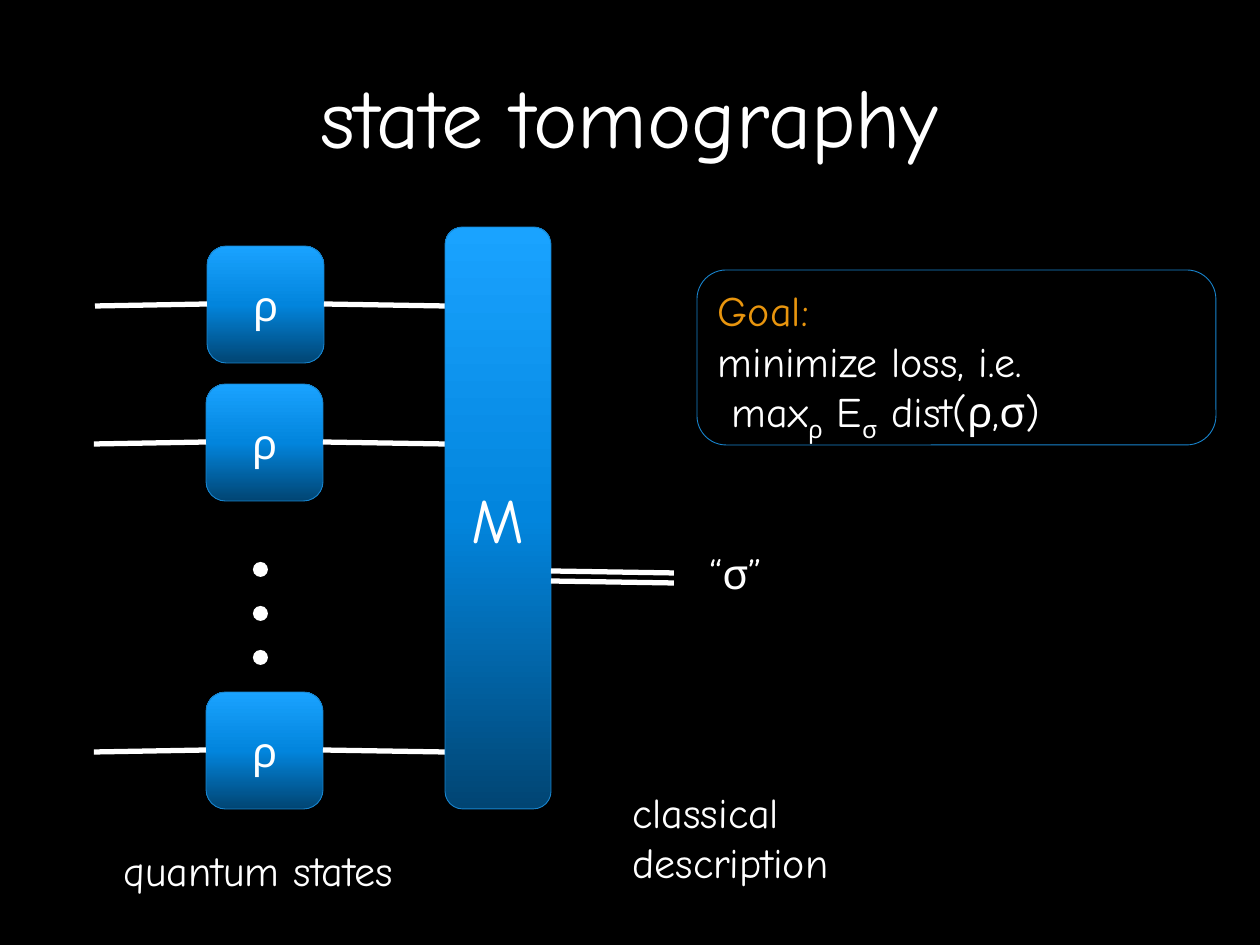
from dataclasses import dataclass

from lxml import etree
from pptx import Presentation
from pptx.dml.color import RGBColor
from pptx.enum.shapes import MSO_CONNECTOR, MSO_SHAPE
from pptx.enum.text import MSO_ANCHOR, PP_ALIGN
from pptx.oxml import parse_xml
from pptx.oxml.ns import nsdecls, qn
from pptx.util import Pt

ROUND, OVAL = MSO_SHAPE.ROUNDED_RECTANGLE, MSO_SHAPE.OVAL
LINE = MSO_CONNECTOR.STRAIGHT
LEFT, CENTER = PP_ALIGN.LEFT, PP_ALIGN.CENTER
TOP, MIDDLE = MSO_ANCHOR.TOP, MSO_ANCHOR.MIDDLE


@dataclass(frozen=True)
class Theme:
    font: str = "Comic Neue"
    back: str = "000000"
    ink: str = "FFFFFF"
    accent: str = "E8950E"
    edge: str = "1884CD"
    blend: tuple = ((0, "014573"), (50, "0285DD"), (100, "1AA3FF"))
    title: int = 48
    large: int = 36
    body: int = 24
    wire: float = 3
    hair: float = 0.5


THEME = Theme()
SCALE = 914400 / 126  # EMU per px

# Content: each run is (text, colour, baseline in percent)
TITLE = ("state tomography", (94, 16, 1071, 197))
LABELS = [
    ("“σ”", (697, 541, 106, 63)),
    ("quantum states", (111, 838, 314, 63)),
    ("classical\ndescription", (620, 780, 232, 115)),
]
GOAL = [
    [("Goal:", THEME.accent, 0)],
    [
        ("minimize loss, i.e.\n max", THEME.ink, 0),
        ("ρ", THEME.ink, -25),
        (" E", THEME.ink, 0),
        ("σ", THEME.ink, -25),
        (" dist(ρ,σ)", THEME.ink, 0),
    ],
]
GOAL_BOX = (697, 270, 519, 175)

# Layout
STATES = [(207, 246), (206, 384), (206, 692)]  # left, top
SIDE, REACH, DROP = 117, 112, 2
METER = (445, 227, 106, 582)
DOT, DOT_LEFT, DOT_TOP, DOT_STEP = 15, 253, 562, 44
OUT_ROWS, OUT_END = (571, 581), 674


def emu(*sizes):
    return [round(size * SCALE) for size in sizes]


def color(code):
    return RGBColor.from_string(code)


def write(frame, text, size=THEME.body, align=LEFT, anchor=TOP, wrap=True):
    """Fill a frame with a plain string or with paragraphs of runs."""
    frame.word_wrap, frame.vertical_anchor = wrap, anchor
    paras = [[(text, THEME.ink, 0)]] if isinstance(text, str) else text
    for i, runs in enumerate(paras):
        para = frame.add_paragraph() if i else frame.paragraphs[0]
        para.alignment = align
        para.font.size, para.font.name = Pt(size), THEME.font
        for words, code, base in runs:
            for j, part in enumerate(words.split("\n")):
                if j:
                    para.add_line_break()
                run = para.add_run()
                run.text = part
                run.font.size, run.font.name = Pt(size), THEME.font
                run.font.color.rgb = color(code)
                if base:
                    run.font._element.set("baseline", str(base * 1000))


def label(slide, text, box, **style):
    write(slide.shapes.add_textbox(*emu(*box)).text_frame, text, **style)


def blend(shape):
    """Give a shape the theme gradient, first stop at the bottom."""
    stops = "".join(
        f'<a:gs pos="{pos * 1000}"><a:srgbClr val="{code}"/></a:gs>'
        for pos, code in THEME.blend
    )
    shape.fill.background()
    old = shape._element.spPr.find(qn("a:noFill"))
    old.getparent().replace(old, parse_xml(
        f'<a:gradFill rotWithShape="1" {nsdecls("a")}><a:gsLst>{stops}</a:gsLst>'
        '<a:lin ang="16200000" scaled="0"/></a:gradFill>'
    ))


def panel(slide, text, box, filled=True, **style):
    shape = slide.shapes.add_shape(ROUND, *emu(*box))
    shape.shadow.inherit = False
    if filled:
        blend(shape)
    else:
        shape.fill.background()
    shape.line.color.rgb = color(THEME.edge)
    shape.line.width = Pt(THEME.hair)
    write(shape.text_frame, text, **style)


def dot(slide, left, top):
    shape = slide.shapes.add_shape(OVAL, *emu(left, top, DOT, DOT))
    shape.shadow.inherit = False
    shape.fill.solid()
    shape.fill.fore_color.rgb = color(THEME.ink)
    shape.line.fill.background()


def wire(slide, start, end):
    link = slide.shapes.add_connector(LINE, *emu(*start, *end))
    link.line.color.rgb = color(THEME.ink)
    link.line.width = Pt(THEME.wire)
    etree.SubElement(link._element.spPr, qn("a:effectLst"))


def main():
    deck = Presentation()
    deck.slide_width, deck.slide_height = emu(1260, 945)
    slide = deck.slides.add_slide(deck.slide_layouts[6])
    slide.background.fill.solid()
    slide.background.fill.fore_color.rgb = color(THEME.back)

    text, box = TITLE
    label(slide, text, box, size=THEME.title, align=CENTER, anchor=MIDDLE)

    meter_left, _, meter_width, _ = METER
    for left, top in STATES:
        panel(slide, "ρ", (left, top, SIDE, SIDE), align=CENTER, anchor=MIDDLE)
        mid, right = top + SIDE // 2, left + SIDE
        wire(slide, (left, mid), (left - REACH, mid + DROP))
        wire(slide, (meter_left, mid + DROP), (right, mid))

    for i in range(3):
        dot(slide, DOT_LEFT, DOT_TOP + i * DOT_STEP)

    panel(slide, "M", METER, size=THEME.large, align=CENTER, anchor=MIDDLE)
    for row in OUT_ROWS:
        wire(slide, (OUT_END, row + DROP), (meter_left + meter_width, row))

    for text, box in LABELS:
        label(slide, text, box, wrap=False)
    panel(slide, GOAL, GOAL_BOX, filled=False)
    deck.save("out.pptx")


if __name__ == "__main__":
    main()
